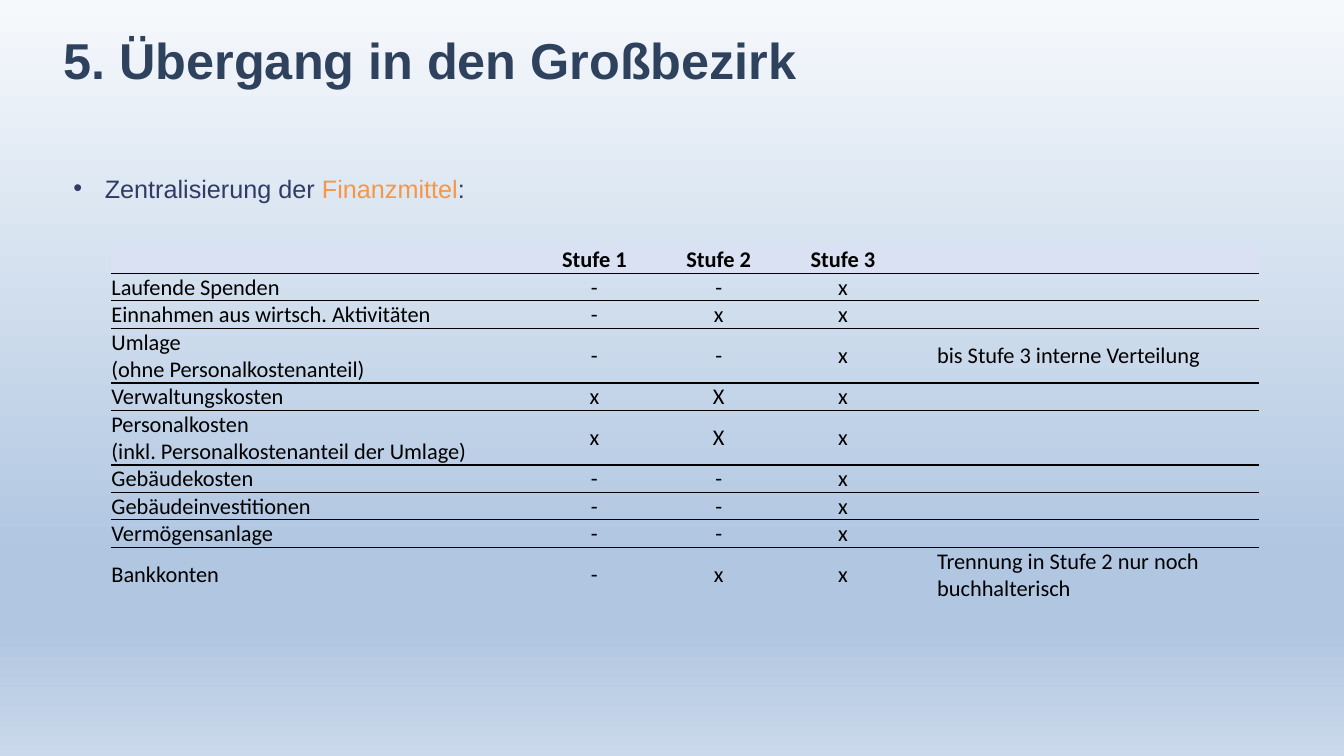
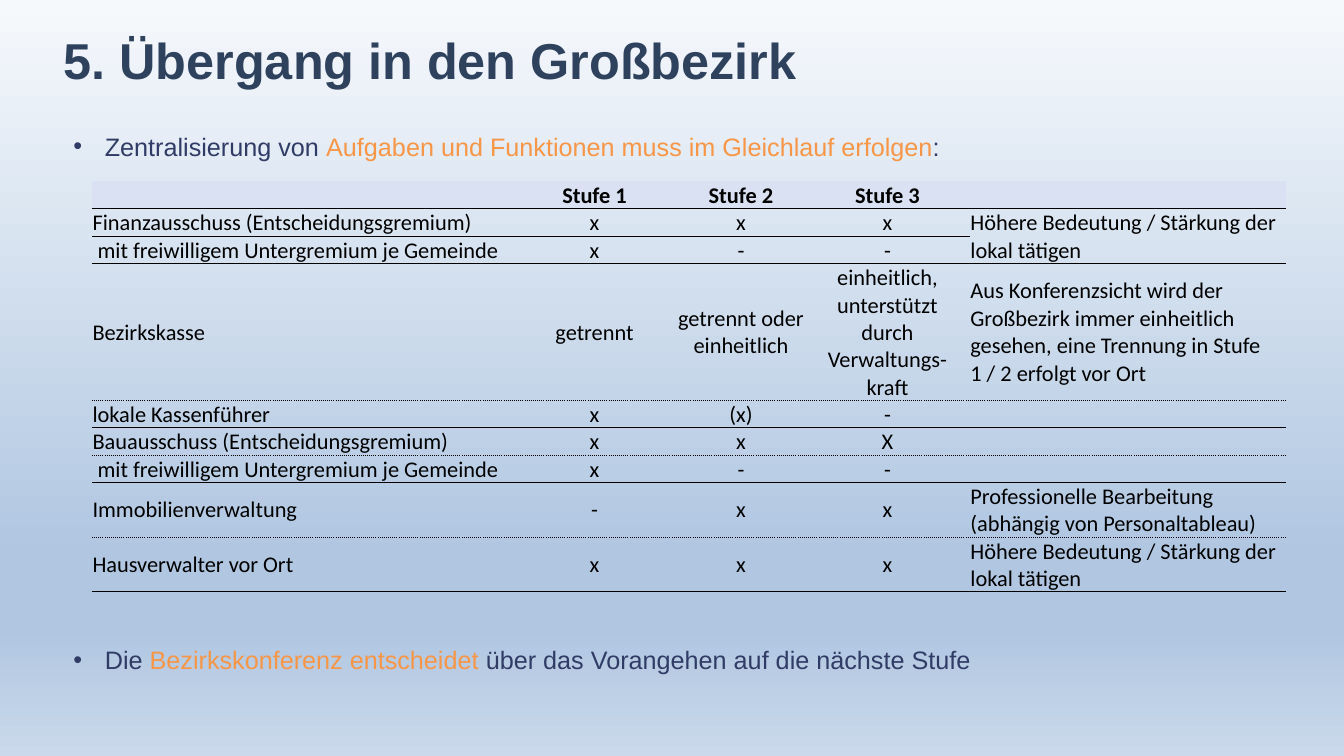
from dataclasses import dataclass

from lxml import etree
from pptx import Presentation
from pptx.dml.color import RGBColor
from pptx.enum.dml import MSO_LINE
from pptx.enum.text import MSO_ANCHOR, PP_ALIGN
from pptx.oxml.ns import qn
from pptx.slide import Slide
from pptx.table import _Cell
from pptx.util import Pt

# Colours
TITLE_BLUE = RGBColor(0x2E, 0x42, 0x5E)
TEXT_BLUE = RGBColor(0x30, 0x3C, 0x66)
ORANGE = RGBColor(0xF7, 0x96, 0x46)
BLACK = RGBColor(0, 0, 0)
HEADER_FILL = RGBColor(0xD9, 0xE1, 0xF2)
BG_STOPS = (
    (0, RGBColor(0xF6, 0xF9, 0xFC)),
    (74, RGBColor(0xB0, 0xC6, 0xE1)),
    (83, RGBColor(0xB0, 0xC6, 0xE1)),
    (100, RGBColor(0xCA, 0xD9, 0xEB)),
)

# Enum members
LEFT, CENTER = PP_ALIGN.LEFT, PP_ALIGN.CENTER
MIDDLE, BOTTOM = MSO_ANCHOR.MIDDLE, MSO_ANCHOR.BOTTOM
SOLID, DOTTED = MSO_LINE.SOLID, MSO_LINE.ROUND_DOT
DASH_NAMES = {SOLID: "solid", DOTTED: "sysDot"}

# Shared formats
TITLE = "5. Übergang in den Großbezirk"
TITLE_FONT = {"name": "Arial", "size": Pt(36), "bold": True}
BULLET_FONT = {"name": "Arial", "size": Pt(18)}
CELL_SIZE = Pt(16)
CELL_FONT = {"name": "Calibri", "size": CELL_SIZE}
CELL_MARGINS = {"margin_left": Pt(0.4), "margin_right": Pt(0.4),
                "margin_top": Pt(0.4), "margin_bottom": Pt(0)}
NO_MARGINS = {side: Pt(0) for side in CELL_MARGINS}
BLANK_LAYOUT = 6
TEXT_LEFT = 45.4
BULLET_INDENT = Pt(22.4)
LINE_HEIGHT = 19.5
SUB_ROW_INDENT = Pt(4)
PLAIN_STYLE = "{2D5ABB26-0587-4C30-8999-92F81FD0307C}"


@dataclass
class Bullet:
    top: float
    before: str
    accent: str
    after: str


@dataclass
class Row:
    label: str
    stages: tuple[str, str, str]
    note: str = ""
    rule: MSO_LINE | None = None  # line below the row
    lines: int = 1
    sub: bool = False
    note_rows: int = 1


@dataclass
class Grid:
    left: float
    top: float
    label_width: float
    stage_width: float
    gap: float
    note_width: float
    rows: list[Row]


@dataclass
class Page:
    bullets: list[Bullet]
    grid: Grid


HEADER = Row("", ("Stufe 1", "Stufe 2", "Stufe 3"), rule=SOLID)
LOCAL_NOTE = "Höhere Bedeutung / Stärkung der lokal tätigen"
SUB_COMMITTEE = "mit freiwilligem Untergremium je Gemeinde"

FINANCES = Page(
    [Bullet(120, "Zentralisierung der ", "Finanzmittel", ":")],
    Grid(79.2, 175.7, 301, 88.8, 22.5, 230, [
        HEADER,
        Row("Laufende Spenden", ("-", "-", "x")),
        Row("Einnahmen aus wirtsch. Aktivitäten", ("-", "x", "x"), rule=SOLID),
        Row("Umlage\n(ohne Personalkostenanteil)", ("-", "-", "x"),
            "bis Stufe 3 interne Verteilung", SOLID, 2),
        Row("Verwaltungskosten", ("x", "X", "x")),
        Row("Personalkosten\n(inkl. Personalkostenanteil der Umlage)",
            ("x", "X", "x"), rule=SOLID, lines=2),
        Row("Gebäudekosten", ("-", "-", "x")),
        Row("Gebäudeinvestitionen", ("-", "-", "x"), rule=SOLID),
        Row("Vermögensanlage", ("-", "-", "x"), rule=SOLID),
        Row("Bankkonten", ("-", "x", "x"),
            "Trennung in Stufe 2 nur noch buchhalterisch", lines=2),
    ]),
)

TASKS = Page(
    [Bullet(90, "Zentralisierung von ",
            "Aufgaben und Funktionen muss im Gleichlauf erfolgen", ":"),
     Bullet(457, "Die ", "Bezirkskonferenz entscheidet ",
            "über das Vorangehen auf die nächste Stufe")],
    Grid(65.7, 129.6, 306.7, 104.6, 6.6, 226, [
        HEADER,
        Row("Finanzausschuss (Entscheidungsgremium)", ("x", "x", "x"),
            LOCAL_NOTE, note_rows=2),
        Row(SUB_COMMITTEE, ("x", "-", "-"), rule=SOLID, sub=True),
        Row("Bezirkskasse",
            ("getrennt", "getrennt oder einheitlich",
             "einheitlich, unterstützt durch Verwaltungs-kraft"),
            "Aus Konferenzsicht wird der Großbezirk immer einheitlich "
            "gesehen, eine Trennung in Stufe 1 / 2 erfolgt vor Ort",
            DOTTED, 5),
        Row("lokale Kassenführer", ("x", "(x)", "-"), rule=SOLID),
        Row("Bauausschuss (Entscheidungsgremium)", ("x", "x", "X"),
            rule=DOTTED),
        Row(SUB_COMMITTEE, ("x", "-", "-"), rule=SOLID, sub=True),
        Row("Immobilienverwaltung", ("-", "x", "x"),
            "Professionelle Bearbeitung\n(abhängig von Personaltableau)",
            DOTTED, 2),
        Row("Hausverwalter vor Ort", ("x", "x", "x"), LOCAL_NOTE, SOLID, 2),
    ]),
)


def apply(target: object, values: dict) -> None:
    for name, value in values.items():
        setattr(target, name, value)


def set_background(prs: Presentation) -> None:
    """Give the master the gradient that all slides share."""
    master = prs.slide_master
    fill = master.background.fill
    fill.gradient()
    fill.gradient_angle = 270
    stops = master.element.xpath("./p:cSld/p:bg//a:gsLst")[0]
    for stop in list(stops):
        stops.remove(stop)
    for percent, color in BG_STOPS:
        stop = etree.SubElement(stops, qn("a:gs"), pos=str(percent * 1000))
        etree.SubElement(stop, qn("a:srgbClr"), val=str(color))


def add_title(s: Slide) -> None:
    sp = s.shapes.add_textbox(Pt(TEXT_LEFT), Pt(21), Pt(668), Pt(44))
    tf = sp.text_frame
    apply(tf, NO_MARGINS | {"word_wrap": True})
    r = tf.paragraphs[0].add_run()
    r.text = TITLE
    apply(r.font, TITLE_FONT)
    r.font.color.rgb = TITLE_BLUE


def add_bullet(s: Slide, bullet: Bullet) -> None:
    sp = s.shapes.add_textbox(Pt(TEXT_LEFT), Pt(bullet.top), Pt(887), Pt(28))
    tf = sp.text_frame
    tf.word_wrap = True
    p = tf.paragraphs[0]
    p_pr = p._p.get_or_add_pPr()
    p_pr.set("marL", str(BULLET_INDENT))
    p_pr.set("indent", str(-BULLET_INDENT))
    etree.SubElement(p_pr, qn("a:buFont"), typeface="Arial")
    etree.SubElement(p_pr, qn("a:buChar"), char="•")
    for text, color in ((bullet.before, TEXT_BLUE), (bullet.accent, ORANGE),
                        (bullet.after, TEXT_BLUE)):
        r = p.add_run()
        r.text = text
        apply(r.font, BULLET_FONT)
        r.font.color.rgb = color


def add_rule(cell: _Cell, side: str, dash: MSO_LINE) -> None:
    ln = etree.Element(qn(f"a:{side}"), w=str(Pt(1)))
    fill = etree.SubElement(ln, qn("a:solidFill"))
    etree.SubElement(fill, qn("a:srgbClr"), val=str(BLACK))
    etree.SubElement(ln, qn("a:prstDash"), val=DASH_NAMES[dash])
    cell._tc.get_or_add_tcPr().insert(0, ln)


def fill_cell(cell: _Cell, text: str, align: PP_ALIGN, header: bool) -> None:
    apply(cell, CELL_MARGINS)
    cell.vertical_anchor = BOTTOM if header else MIDDLE
    if header:
        cell.fill.solid()
        cell.fill.fore_color.rgb = HEADER_FILL
    else:
        cell.fill.background()
    tf = cell.text_frame
    if not text:  # keeps empty cells as low as the text rows
        etree.SubElement(tf.paragraphs[0]._p, qn("a:endParaRPr"),
                         sz=str(int(CELL_SIZE.pt * 100)))
        return
    tf.text = text
    for p in tf.paragraphs:
        p.alignment = align
        for r in p.runs:
            apply(r.font, CELL_FONT | {"bold": header})
            r.font.color.rgb = BLACK


def add_grid(s: Slide, grid: Grid) -> None:
    widths = [grid.label_width, *[grid.stage_width] * 3, grid.gap,
              grid.note_width]
    heights = [row.lines * LINE_HEIGHT for row in grid.rows]
    frame = s.shapes.add_table(len(heights), len(widths), Pt(grid.left),
                               Pt(grid.top), Pt(sum(widths)),
                               Pt(sum(heights)))
    table = frame.table
    apply(table, {"first_row": False, "horz_banding": False})
    table._tbl.tblPr.find(qn("a:tableStyleId")).text = PLAIN_STYLE
    for column, width in zip(table.columns, widths):
        column.width = Pt(width)

    rule_above = None
    for i, (row, height) in enumerate(zip(grid.rows, heights)):
        table.rows[i].height = Pt(height)
        for j, text in enumerate((row.label, *row.stages, "", row.note)):
            cell = table.cell(i, j)
            align = CENTER if 1 <= j <= 3 else LEFT
            fill_cell(cell, text, align, row is HEADER)
            if row.rule is not None:
                add_rule(cell, "lnB", row.rule)
            if rule_above is not None:
                add_rule(cell, "lnT", rule_above)
        if row.sub:
            table.cell(i, 0).margin_left = SUB_ROW_INDENT
        rule_above = row.rule

    # Notes that reach over several rows
    last = len(widths) - 1
    for i, row in enumerate(grid.rows):
        if row.note_rows > 1:
            table.cell(i, last).merge(table.cell(i + row.note_rows - 1, last))


def main() -> None:
    prs = Presentation()
    prs.slide_width, prs.slide_height = Pt(960), Pt(540)
    set_background(prs)
    for page in (FINANCES, TASKS):
        s = prs.slides.add_slide(prs.slide_layouts[BLANK_LAYOUT])
        add_title(s)
        for bullet in page.bullets:
            add_bullet(s, bullet)
        add_grid(s, page.grid)
    prs.save("out.pptx")


if __name__ == "__main__":
    main()
